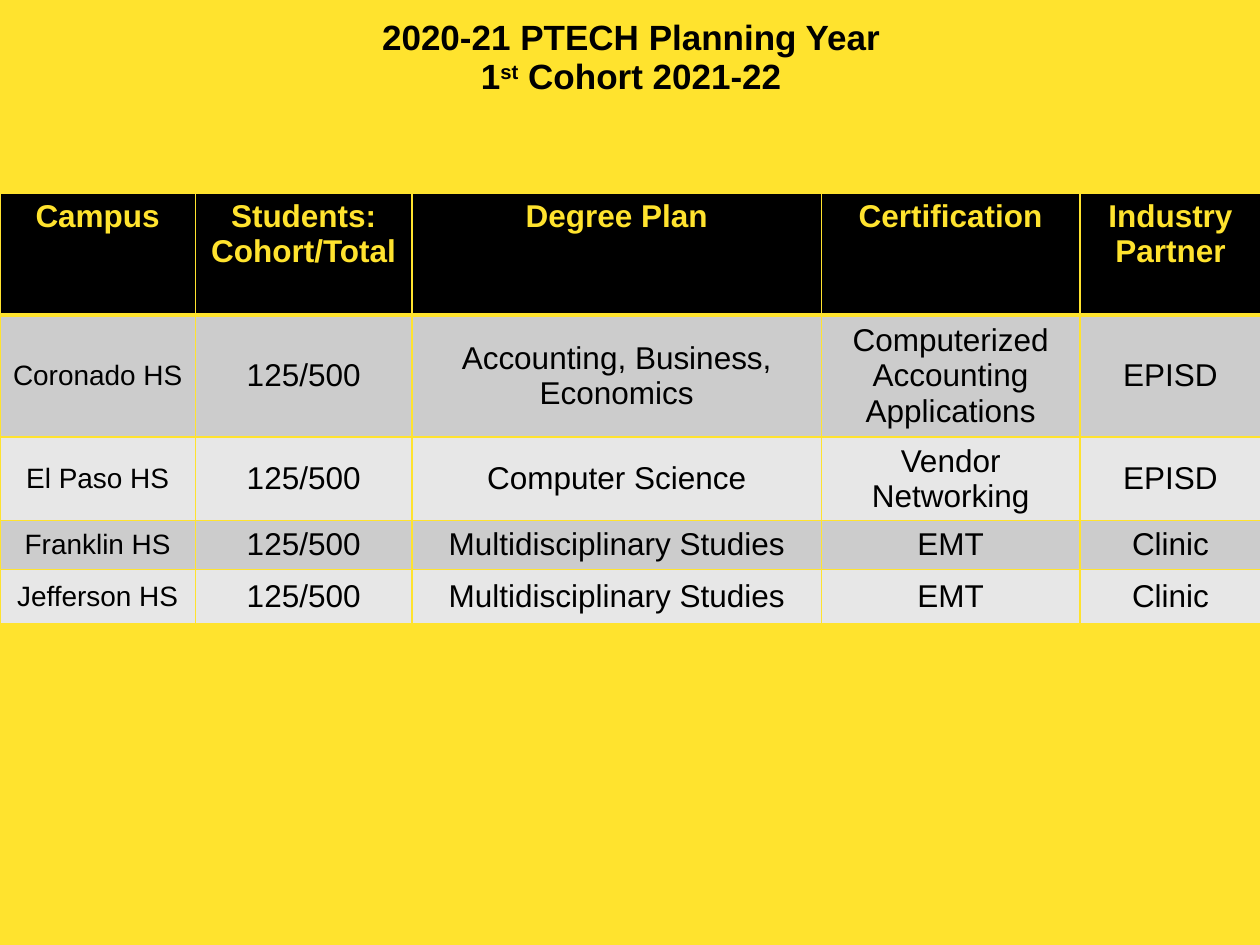
from lxml import etree
from pptx import Presentation
from pptx.dml.color import RGBColor
from pptx.enum.text import MSO_ANCHOR, PP_ALIGN
from pptx.oxml.ns import qn
from pptx.util import Inches, Pt

CENTER = PP_ALIGN.CENTER
TOP = MSO_ANCHOR.TOP
MIDDLE = MSO_ANCHOR.MIDDLE
YELLOW = RGBColor(0xFF, 0xE3, 0x2E)
BLACK = RGBColor(0x00, 0x00, 0x00)
DARK_GRAY = RGBColor(0xCC, 0xCC, 0xCC)
LIGHT_GRAY = RGBColor(0xE7, 0xE7, 0xE7)
PLAIN_STYLE = "{2D5ABB26-0587-4C30-8999-92F81FD0307C}"

TITLE_LINES = [
    [("2020-21 PTECH Planning Year", 0)],
    [("1", 0), ("st", 30), (" Cohort 2021-22", 0)],
]
PROGRAMS = [
    ["Campus", "Students: Cohort/Total", "Degree Plan", "Certification", "Industry Partner"],
    ["Coronado HS", "125/500", "Accounting, Business, Economics",
     "Computerized Accounting Applications", "EPISD"],
    ["El Paso HS", "125/500", "Computer Science", "Vendor Networking", "EPISD"],
    ["Franklin HS", "125/500", "Multidisciplinary Studies", "EMT", "Clinic"],
    ["Jefferson HS", "125/500", "Multidisciplinary Studies", "EMT", "Clinic"],
]
COLUMN_SHARES = [0.155, 0.172, 0.325, 0.205, 0.144]
ROW_SHARES = [0.97 / 7.5, 0.97 / 7.5, 0.46 / 7.5, 0.39 / 7.5, 0.43 / 7.5]

presentation = Presentation()
presentation.slide_width = Inches(10)
presentation.slide_height = Inches(7.5)
WIDTH, HEIGHT = presentation.slide_width, presentation.slide_height
slide = presentation.slides.add_slide(presentation.slide_layouts[6])
slide.background.fill.solid()
slide.background.fill.fore_color.rgb = YELLOW


def add_plain_table(top, column_shares, row_shares):
    frame = slide.shapes.add_table(
        len(row_shares), len(column_shares), 0, int(HEIGHT * top),
        int(WIDTH * sum(column_shares)), int(HEIGHT * sum(row_shares)))
    table = frame.table
    table._tbl.tblPr.find(qn("a:tableStyleId")).text = PLAIN_STYLE
    table.horz_banding = False
    for column, share in zip(table.columns, column_shares):
        column.width = int(WIDTH * share)
    for row, share in zip(table.rows, row_shares):
        row.height = int(HEIGHT * share)
    return table


def write_text(cell, lines, size=18, bold=False, color=BLACK, anchor=TOP):
    cell.vertical_anchor = anchor
    for index, line in enumerate(lines):
        frame = cell.text_frame
        paragraph = frame.add_paragraph() if index else frame.paragraphs[0]
        paragraph.alignment = CENTER
        for text, raised in line:
            run = paragraph.add_run()
            run.text = text
            run.font.name = "Arial"
            run.font.size = Pt(size)
            run.font.bold = bold
            run.font.color.rgb = color
            if raised:
                run.font._element.set("baseline", str(raised * 1000))


title_cell = add_plain_table(0.02, [1.002], [0.06]).cell(0, 0)
title_cell.margin_left = title_cell.margin_right = Inches(0.05)
title_cell.margin_top = title_cell.margin_bottom = 0
title_cell.fill.background()
write_text(title_cell, TITLE_LINES, size=20, bold=True)

program_table = add_plain_table(0.204, COLUMN_SHARES, ROW_SHARES)
for row_index, program in enumerate(PROGRAMS):
    is_header = row_index == 0
    for column_index, text in enumerate(program):
        cell = program_table.cell(row_index, column_index)
        properties = cell._tc.get_or_add_tcPr()
        for side in ("lnL", "lnR", "lnT", "lnB"):
            heavy = (row_index, side) in ((0, "lnB"), (1, "lnT"))
            border = etree.SubElement(properties, qn(f"a:{side}"), w=str(Pt(3 if heavy else 1)))
            fill = etree.SubElement(border, qn("a:solidFill"))
            etree.SubElement(fill, qn("a:srgbClr"), val=str(YELLOW))
        cell.fill.solid()
        if is_header:
            cell.fill.fore_color.rgb = BLACK
            write_text(cell, [[(text, 0)]], bold=True, color=YELLOW)
        else:
            cell.fill.fore_color.rgb = DARK_GRAY if row_index % 2 else LIGHT_GRAY
            write_text(cell, [[(text, 0)]], size=18 if column_index else 16, anchor=MIDDLE)

presentation.save("out.pptx")
